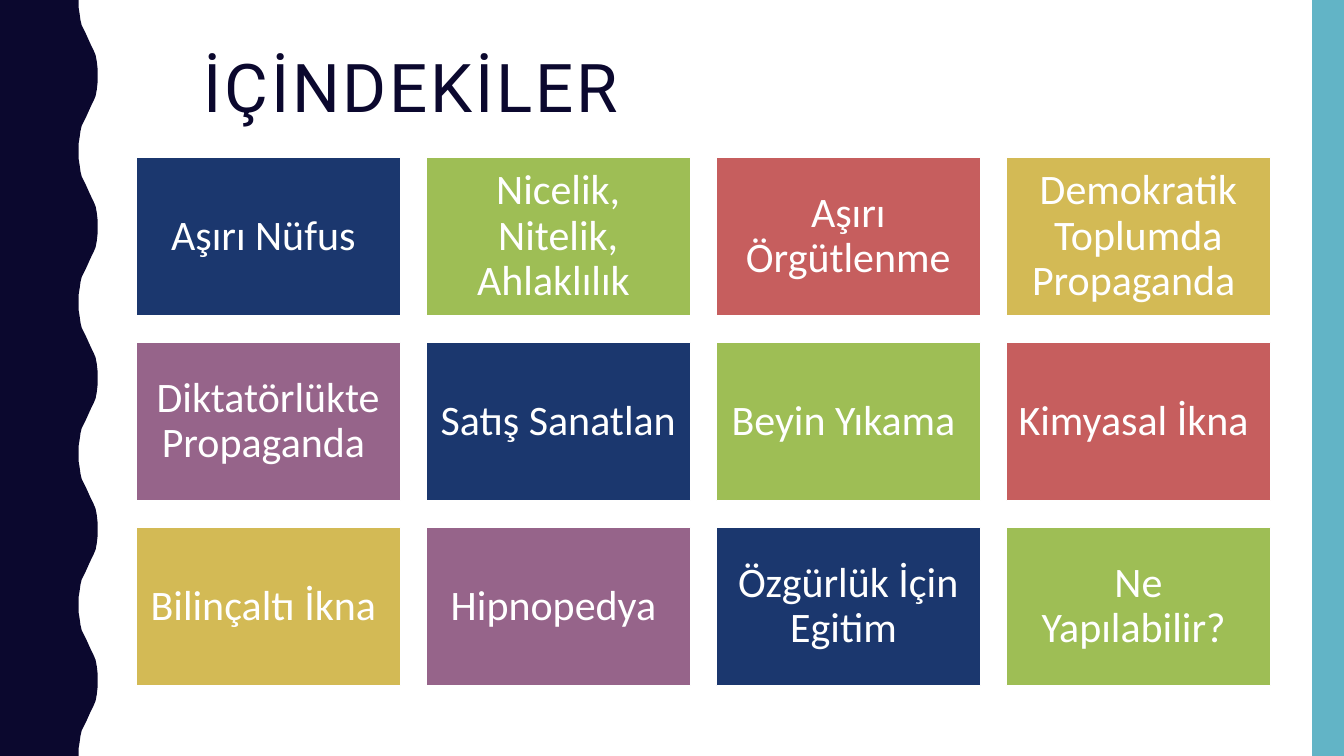
from dataclasses import dataclass

from pptx import Presentation
from pptx.dml.color import RGBColor
from pptx.enum.shapes import MSO_SHAPE
from pptx.enum.text import MSO_ANCHOR, PP_ALIGN
from pptx.util import Cm, Pt

RECT = MSO_SHAPE.RECTANGLE
TOP, MIDDLE = MSO_ANCHOR.TOP, MSO_ANCHOR.MIDDLE
LEFT, CENTER = PP_ALIGN.LEFT, PP_ALIGN.CENTER

WIDTH, HEIGHT = 33.87, 19.05
PERIOD = HEIGHT / 5
RISE = [
    (1.98, 0), (1.98, 0.18), (2.01, 0.36), (2.03, 0.51), (2.06, 0.64),
    (2.11, 0.74), (2.16, 0.84), (2.21, 0.95), (2.26, 1.06), (2.31, 1.17),
    (2.36, 1.27), (2.41, 1.39), (2.44, 1.55), (2.46, 1.73), (2.46, 1.91),
]
TOPICS = [
    "Aşırı Nüfus ", "Nicelik, Nitelik, Ahlaklılık ", "Aşırı Örgütlenme",
    "Demokratik Toplumda Propaganda ", "Diktatörlükte Propaganda ",
    "Satış Sanatlan ", "Beyin Yıkama ", "Kimyasal İkna ",
    "Bilinçaltı İkna ", "Hipnopedya ", "Özgürlük İçin Egitim ",
    "Ne Yapılabilir? ",
]


@dataclass(frozen=True)
class Theme:
    ink: str = "0B082E"
    teal: str = "62B4C6"
    white: str = "FFFFFF"
    cards: tuple = ("1B376E", "9EBE55", "C65E5E", "D3BA55", "96648A")
    title_font: str = "Roboto"
    card_font: str = "Calibri"
    title_size: int = 48
    card_size: int = 30


class Deck:
    def __init__(self, slide, theme):
        self.slide = slide
        self.theme = theme

    def paint(self, shape, color):
        shape.shadow.inherit = False
        shape.fill.solid()
        shape.fill.fore_color.rgb = RGBColor.from_string(color)
        shape.line.fill.background()

    def label(self, shape, text, font, size, color, align, anchor):
        frame = shape.text_frame
        frame.text = text
        frame.word_wrap = True
        frame.vertical_anchor = anchor
        line = frame.paragraphs[0]
        line.alignment = align
        line.line_spacing = 0.9
        run = line.runs[0]
        run.font.name = font
        run.font.size = Pt(size)
        run.font.color.rgb = RGBColor.from_string(color)
        return run

    def block(self, left, top, width, height, color):
        shape = self.slide.shapes.add_shape(
            RECT, Cm(left), Cm(top), Cm(width), Cm(height))
        self.paint(shape, color)
        return shape

    def wave(self):
        crest = RISE + [(x, PERIOD - y) for x, y in reversed(RISE[:-1])]
        edge = [(Cm(x), Cm(y + n * PERIOD)) for n in range(5) for x, y in crest]
        form = self.slide.shapes.build_freeform(0, 0)
        form.add_line_segments(edge + [(0, Cm(HEIGHT))], close=True)
        self.paint(form.convert_to_shape(), self.theme.ink)

    def title(self, text):
        look = self.theme
        box = self.slide.shapes.add_textbox(Cm(4.88), Cm(1.24), Cm(26.67), Cm(3))
        run = self.label(box, text, look.title_font, look.title_size,
                         look.ink, LEFT, TOP)
        run._r.get_or_add_rPr().set("spc", "200")

    def card(self, text, left, top, color):
        look = self.theme
        shape = self.block(left, top, 6.66, 3.99, color)
        shape.line.color.rgb = RGBColor.from_string(look.white)
        shape.line.width = Pt(1)
        self.label(shape, text, look.card_font, look.card_size,
                   look.white, CENTER, MIDDLE)
        frame = shape.text_frame
        frame.margin_left = frame.margin_right = Cm(0.3)
        frame.margin_top = frame.margin_bottom = Cm(0.3)


def main():
    show = Presentation()
    show.slide_width, show.slide_height = Cm(WIDTH), Cm(HEIGHT)
    theme = Theme()
    deck = Deck(show.slides.add_slide(show.slide_layouts[6]), theme)
    deck.wave()
    deck.block(33.07, 0, 0.8, HEIGHT, theme.teal)
    deck.title("İÇİNDEKİLER")
    for n, topic in enumerate(TOPICS):
        row, col = divmod(n, 4)
        color = theme.cards[n % len(theme.cards)]
        deck.card(topic, 3.43 + col * 7.31, 3.97 + row * 4.66, color)
    show.save("out.pptx")


if __name__ == "__main__":
    main()
